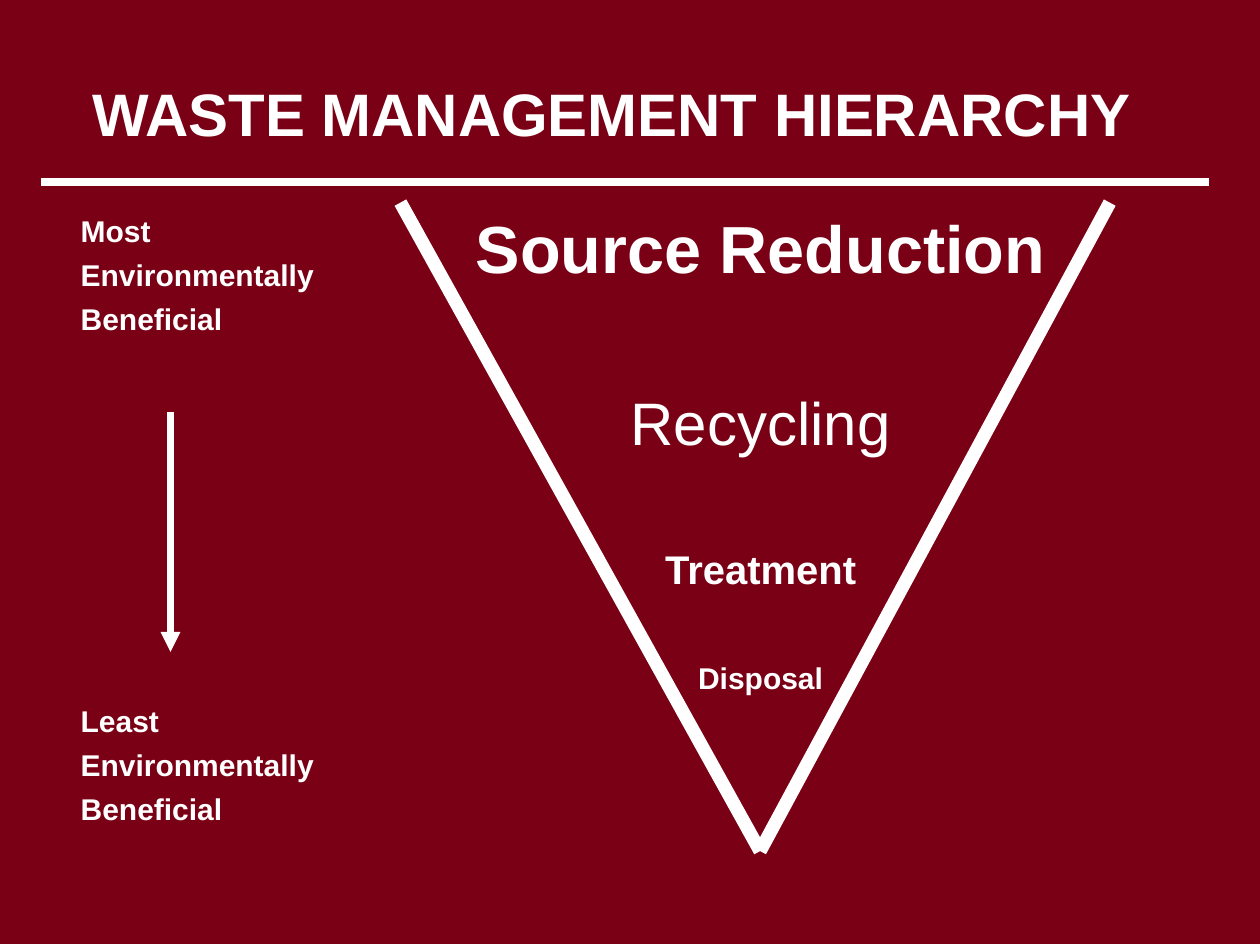
from lxml import etree
from pptx import Presentation
from pptx.dml.color import RGBColor
from pptx.enum.shapes import MSO_CONNECTOR as Connector
from pptx.enum.text import MSO_ANCHOR as Anchor, MSO_AUTO_SIZE as AutoSize, PP_ALIGN as Align
from pptx.oxml.ns import qn
from pptx.util import Pt

COLORS = {"background": "790015", "foreground": "FFFFFF"}
FONT = "Arial"

# Option, size, bold, space before
HIERARCHY = [
    ("Source Reduction", 40, True, 0),
    ("Recycling", 36, False, 59.5),
    ("Treatment", 24, True, 52.2),
    ("Disposal", 18, True, 40),
]


def place(shape, left, top, width, height):
    shape.left, shape.top = Pt(left), Pt(top)
    shape.width, shape.height = Pt(width), Pt(height)


def prepare_frame(shape, wrap=True):
    """Set the common margins and anchor, and return the text frame."""
    frame = shape.text_frame
    frame.auto_size = AutoSize.NONE
    frame.word_wrap = wrap
    frame.vertical_anchor = Anchor.TOP
    frame.margin_left = frame.margin_right = Pt(5)
    frame.margin_top = frame.margin_bottom = Pt(2.2)
    return frame


def write(paragraph, text, size, bold=True, align=Align.LEFT, before=0, spacing=1.0):
    paragraph.alignment = align
    paragraph.space_before = Pt(before)
    paragraph.space_after = Pt(0)
    paragraph.line_spacing = spacing
    run = paragraph.add_run()
    run.text = text
    run.font.name = FONT
    run.font.size = Pt(size)
    run.font.bold = bold
    run.font.color.rgb = RGBColor.from_string(COLORS["foreground"])


def next_paragraph(frame, index):
    return frame.add_paragraph() if index else frame.paragraphs[0]


def remove_bullet(paragraph):
    properties = paragraph._p.get_or_add_pPr()
    properties.set("marL", "0")
    properties.set("indent", "0")
    etree.SubElement(properties, qn("a:buNone"))


def add_line(slide, start, end, width, arrow=False):
    line = slide.shapes.add_connector(
        Connector.STRAIGHT, *(Pt(value) for value in (*start, *end)))
    line.line.color.rgb = RGBColor.from_string(COLORS["foreground"])
    line.line.width = Pt(width)
    if arrow:
        etree.SubElement(line.line._get_or_add_ln(), qn("a:tailEnd"), type="triangle")
    etree.SubElement(line._element.spPr, qn("a:effectLst"))


def add_title(slide, text):
    title = slide.shapes.title
    place(title, 49.8, 44, 635, 50)
    frame = prepare_frame(title, wrap=False)
    write(frame.paragraphs[0], text, 36, align=Align.CENTER)


def add_hierarchy(slide):
    body = slide.placeholders[1]
    place(body, 265.3, 122, 383, 311)
    frame = prepare_frame(body)
    for index, (option, size, bold, before) in enumerate(HIERARCHY):
        paragraph = next_paragraph(frame, index)
        write(paragraph, option, size, bold=bold, align=Align.CENTER, before=before)
        remove_bullet(paragraph)


def add_scale_label(slide, degree, top):
    label = slide.shapes.add_textbox(Pt(43.5), Pt(top), Pt(161), Pt(79))
    frame = prepare_frame(label)
    for index, word in enumerate((degree, "Environmentally", "Beneficial")):
        write(next_paragraph(frame, index), word, 18,
              before=7.5 if index else 0, spacing=0.88)


def main():
    deck = Presentation()
    deck.slide_width, deck.slide_height = Pt(756.72), Pt(567)
    slide = deck.slides.add_slide(deck.slide_layouts[1])
    slide.background.fill.solid()
    slide.background.fill.fore_color.rgb = RGBColor.from_string(COLORS["background"])

    add_line(slide, (24.5, 109.4), (726.3, 109.4), 4.5)
    add_title(slide, "WASTE MANAGEMENT HIERARCHY")

    apex = (456.5, 511.2)
    for corner in ((240.5, 121.7), (666.5, 121.7)):
        add_line(slide, corner, apex, 8)
    add_hierarchy(slide)

    add_scale_label(slide, "Most", 128.3)
    add_line(slide, (102.4, 247.5), (102.4, 391.5), 4, arrow=True)
    add_scale_label(slide, "Least", 422.5)
    deck.save("out.pptx")


if __name__ == "__main__":
    main()
